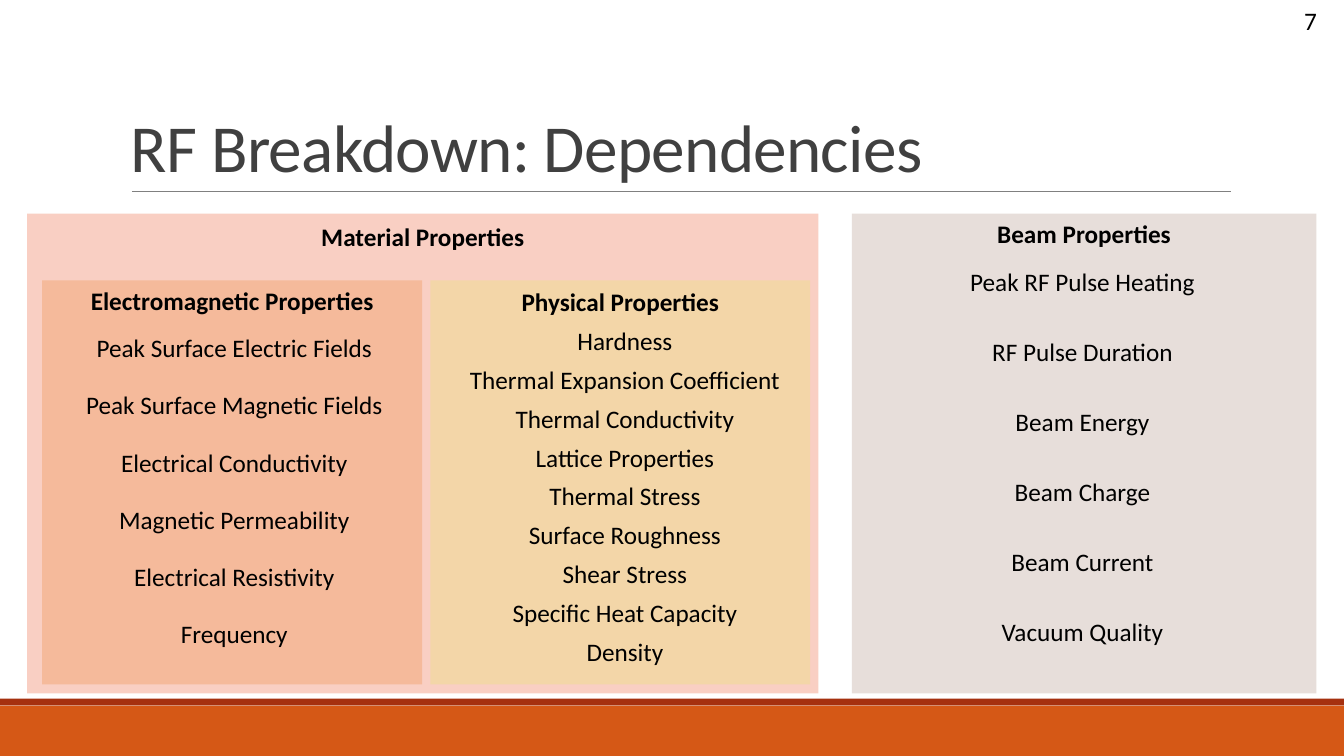
from pptx import Presentation
from pptx.dml.color import RGBColor
from pptx.enum.shapes import MSO_CONNECTOR as Connector, MSO_SHAPE as Shape
from pptx.enum.text import MSO_ANCHOR as Anchor, PP_ALIGN as Align
from pptx.oxml.ns import qn
from pptx.util import Pt
from lxml.etree import SubElement

PANEL_TOP, PANEL_HEIGHT = 152.6, 342.7
INNER_TOP, INNER_WIDTH, INNER_HEIGHT = 200.2, 271.4, 288.7
ELECTROMAGNETIC_LEFT, PHYSICAL_LEFT = 30.2, 307.4
MATERIAL_LEFT, MATERIAL_WIDTH = 19.4, 565.2
BEAM_LEFT, BEAM_WIDTH = 608.4, 331.9
LINE_HEIGHT = 29

ELECTROMAGNETIC = [
    "Peak Surface Electric Fields", "Peak Surface Magnetic Fields",
    "Electrical Conductivity", "Magnetic Permeability",
    "Electrical Resistivity", "Frequency",
]
PHYSICAL = [
    "Hardness", "Thermal Expansion Coefficient", "Thermal Conductivity",
    "Lattice Properties", "Thermal Stress", "Surface Roughness",
    "Shear Stress", "Specific Heat Capacity", "Density",
]
BEAM = [
    "Peak RF Pulse Heating", "RF Pulse Duration", "Beam Energy",
    "Beam Charge", "Beam Current", "Vacuum Quality",
]


def color(value):
    """Return the colour for a hex string."""
    return RGBColor.from_string(value)


def add_panel(slide, left, top, width, height, fill):
    """Add a plain filled rectangle."""
    shape = slide.shapes.add_shape(
        Shape.RECTANGLE, Pt(left), Pt(top), Pt(width), Pt(height))
    shape.shadow.inherit = False
    shape.fill.solid()
    shape.fill.fore_color.rgb = color(fill)
    shape.line.fill.background()


def add_rule(slide, left, right, y):
    """Add a thin horizontal grey line."""
    line = slide.shapes.add_connector(
        Connector.STRAIGHT, Pt(left), Pt(y), Pt(right), Pt(y))
    line.line.color.rgb = color("808080")
    line.line.width = Pt(0.5)
    SubElement(line._element.spPr, qn("a:effectLst"))


def add_text(slide, text, left, top, width, height=LINE_HEIGHT, size=18,
             fill="000000", bold=False, align=Align.CENTER, anchor=Anchor.TOP,
             line_spacing=None, tracking=None):
    """Add a one-paragraph text box."""
    box = slide.shapes.add_textbox(Pt(left), Pt(top), Pt(width), Pt(height))
    frame = box.text_frame
    frame.word_wrap = True
    frame.vertical_anchor = anchor
    paragraph = frame.paragraphs[0]
    paragraph.alignment = align
    paragraph.line_spacing = line_spacing
    run = paragraph.add_run()
    run.text = text
    run.font.name = "Calibri"
    run.font.size = Pt(size)
    run.font.bold = bold
    run.font.color.rgb = color(fill)
    if tracking is not None:
        run.font._element.set("spc", str(round(tracking * 100)))


def add_list(slide, items, center, top, step, width=INNER_WIDTH):
    """Add evenly spaced centred lines of text."""
    for index, item in enumerate(items):
        add_text(slide, item, center - width / 2, top + index * step, width)


def main():
    """Build and save the slide."""
    presentation = Presentation()
    presentation.slide_width, presentation.slide_height = Pt(960), Pt(540)
    slide = presentation.slides.add_slide(presentation.slide_layouts[6])

    add_panel(slide, 0, 504, 960, 36, "D55816")
    add_panel(slide, 0, 499, 960, 4.8, "A5300F")
    add_rule(slide, 94.3, 879, 136.8)
    add_text(slide, "RF Breakdown: Dependencies", 86.4, 22.3, 792, 114.5,
             size=48, fill="404040", align=Align.LEFT, anchor=Anchor.BOTTOM,
             line_spacing=0.85, tracking=-0.5)

    panels = [
        ("Material Properties", MATERIAL_LEFT, PANEL_TOP, MATERIAL_WIDTH,
         PANEL_HEIGHT, "F9CFC3", 2.2),
        ("Beam Properties", BEAM_LEFT, PANEL_TOP, BEAM_WIDTH,
         PANEL_HEIGHT, "E7DEDA", 0),
        ("Electromagnetic Properties", ELECTROMAGNETIC_LEFT, INNER_TOP,
         INNER_WIDTH, INNER_HEIGHT, "F5BA9B", 0),
        ("Physical Properties", PHYSICAL_LEFT, INNER_TOP,
         INNER_WIDTH, INNER_HEIGHT, "F3D6A8", 0.8),
    ]
    for heading, left, top, width, height, fill, offset in panels:
        add_panel(slide, left, top, width, height, fill)
        add_text(slide, heading, left, top + offset, width, bold=True)

    add_list(slide, BEAM, 773.2, 186.6, 50)
    add_list(slide, ELECTROMAGNETIC, 167.4, 233.8, 40.9)
    add_list(slide, PHYSICAL, 446.4, 228.8, 27.75)
    add_text(slide, "7", 924.5, 0, 35.5, align=Align.LEFT)

    presentation.save("out.pptx")


if __name__ == "__main__":
    main()
